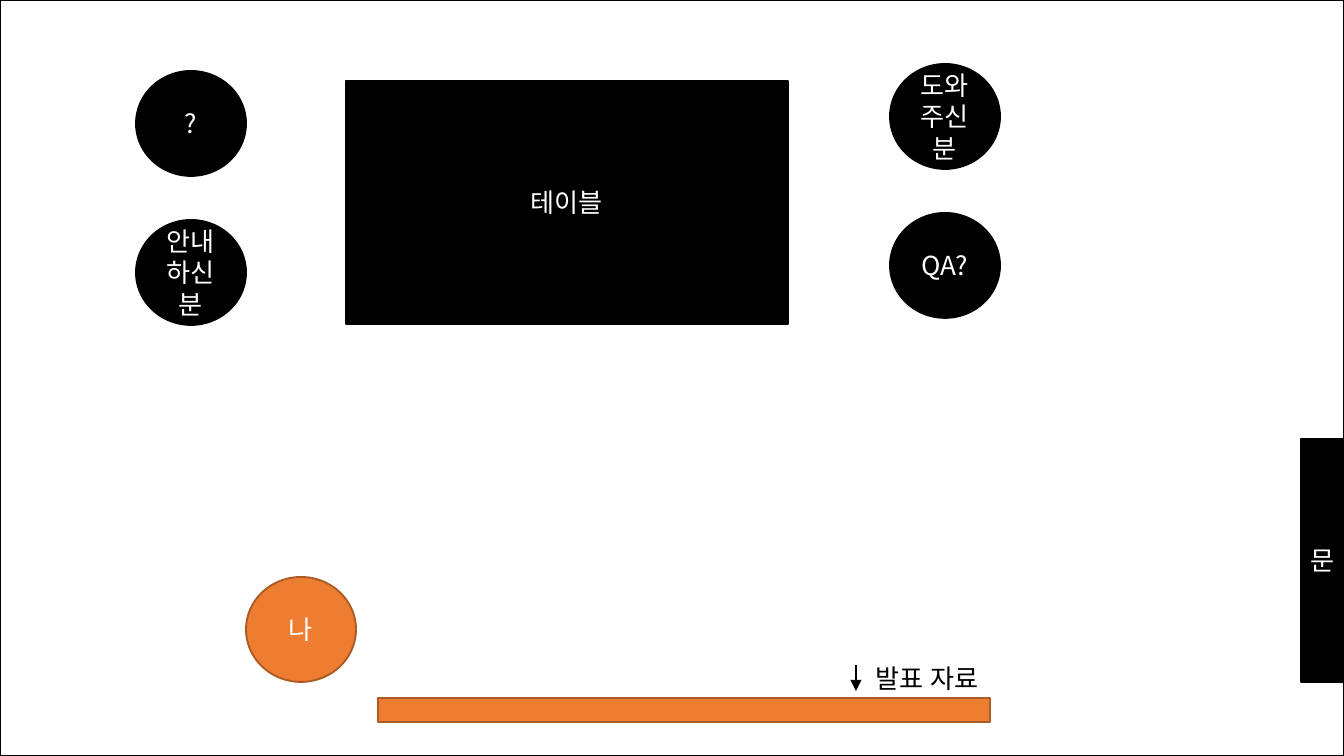
from pptx import Presentation
from pptx import util as u
from pptx.dml.color import RGBColor
from pptx.enum import lang, shapes, text
from pptx.oxml.ns import qn
from lxml import etree

PX = 914400 / 134.4
WIDTH, HEIGHT = 1344, 756
FONT = "Noto Sans CJK KR"
COLORS = {
    "black": "000000",
    "white": "FFFFFF",
    "orange": "ED7D31",
    "brown": "AC5B23",
}
SEAT_W, SEAT_H = 110, 105
TABLE_H = 243
SEATS = [
    ("?", 136, 71, "black", "black"),
    ("안내하신분", 136, 220, "black", "black"),
    ("도와주신분", 890, 64, "black", "black"),
    ("QA?", 890, 213, "black", "black"),
    ("나", 246, 577, "orange", "brown"),
]


def px(length):
    return u.Emu(round(length * PX))


def box(*lengths):
    return [px(length) for length in lengths]


def rgb(name):
    return RGBColor.from_string(COLORS[name])


def write(frame, words, color, align):
    frame.word_wrap = True
    frame.margin_left = frame.margin_right = px(10)
    frame.margin_top = frame.margin_bottom = px(5)
    line = frame.paragraphs[0]
    line.alignment = align
    run = line.add_run()
    run.text = words
    run.font.size = u.Pt(14)
    run.font.name = FONT
    run.font.language_id = lang.MSO_LANGUAGE_ID.KOREAN
    run.font.color.rgb = rgb(color)
    # Hangul takes its face from the East Asian font
    etree.SubElement(run.font._element, qn("a:ea")).set("typeface", FONT)


def add_block(slide, kind, place, fill, outline, words=""):
    block = slide.shapes.add_shape(kind, *box(*place))
    block.shadow.inherit = False
    if fill:
        block.fill.solid()
        block.fill.fore_color.rgb = rgb(fill)
    else:
        block.fill.background()
    block.line.color.rgb = rgb(outline)
    block.line.width = u.Pt(1)
    if words:
        block.text_frame.vertical_anchor = text.MSO_ANCHOR.MIDDLE
        write(block.text_frame, words, "white", text.PP_ALIGN.CENTER)


def add_label(slide, place, words):
    label = slide.shapes.add_textbox(*box(*place))
    label.text_frame.auto_size = text.MSO_AUTO_SIZE.SHAPE_TO_FIT_TEXT
    write(label.text_frame, words, "black", text.PP_ALIGN.RIGHT)


def add_arrow(slide, ends):
    arrow = slide.shapes.add_connector(shapes.MSO_CONNECTOR.STRAIGHT, *box(*ends))
    arrow.line.color.rgb = rgb("black")
    arrow.line.width = u.Pt(0.75)
    tip = etree.SubElement(arrow.line._get_or_add_ln(), qn("a:tailEnd"))
    tip.set("type", "triangle")
    etree.SubElement(arrow._element.spPr, qn("a:effectLst"))


def main():
    deck = Presentation()
    deck.slide_width, deck.slide_height = box(WIDTH, HEIGHT)
    room = deck.slides.add_slide(deck.slide_layouts[6])
    oval, rect = shapes.MSO_SHAPE.OVAL, shapes.MSO_SHAPE.RECTANGLE

    for person, left, top, fill, outline in SEATS:
        add_block(room, oval, (left, top, SEAT_W, SEAT_H), fill, outline, person)
    add_block(room, rect, (346, 81, 442, TABLE_H), "black", "black", "테이블")
    add_block(room, rect, (378, 698, 612, 24), "orange", "brown")
    add_label(room, (653, 657, 336, 41), "발표 자료")
    add_block(room, rect, (WIDTH - 43, 439, 43, TABLE_H), "black", "black", "문")
    add_block(room, rect, (0, 0, WIDTH, HEIGHT), None, "black")
    add_arrow(room, (856, 665, 856, 691))

    deck.save("out.pptx")


if __name__ == "__main__":
    main()
